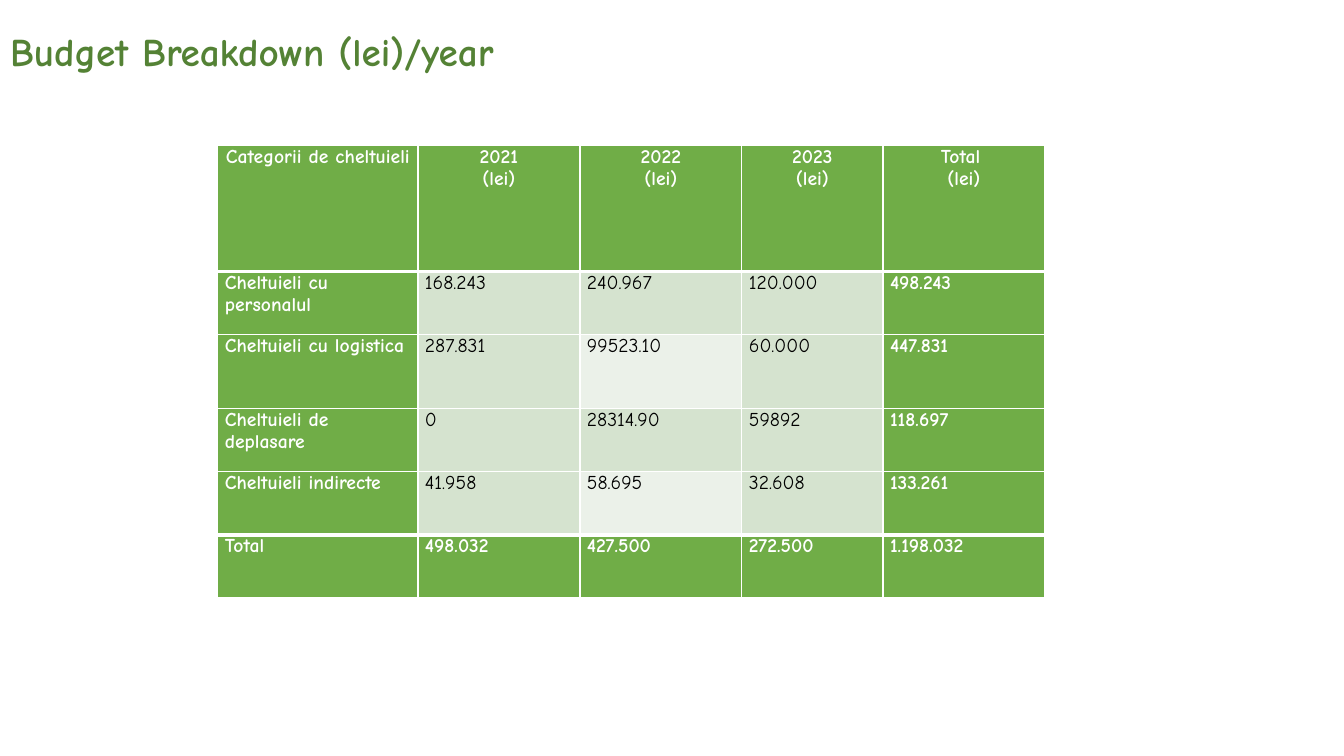
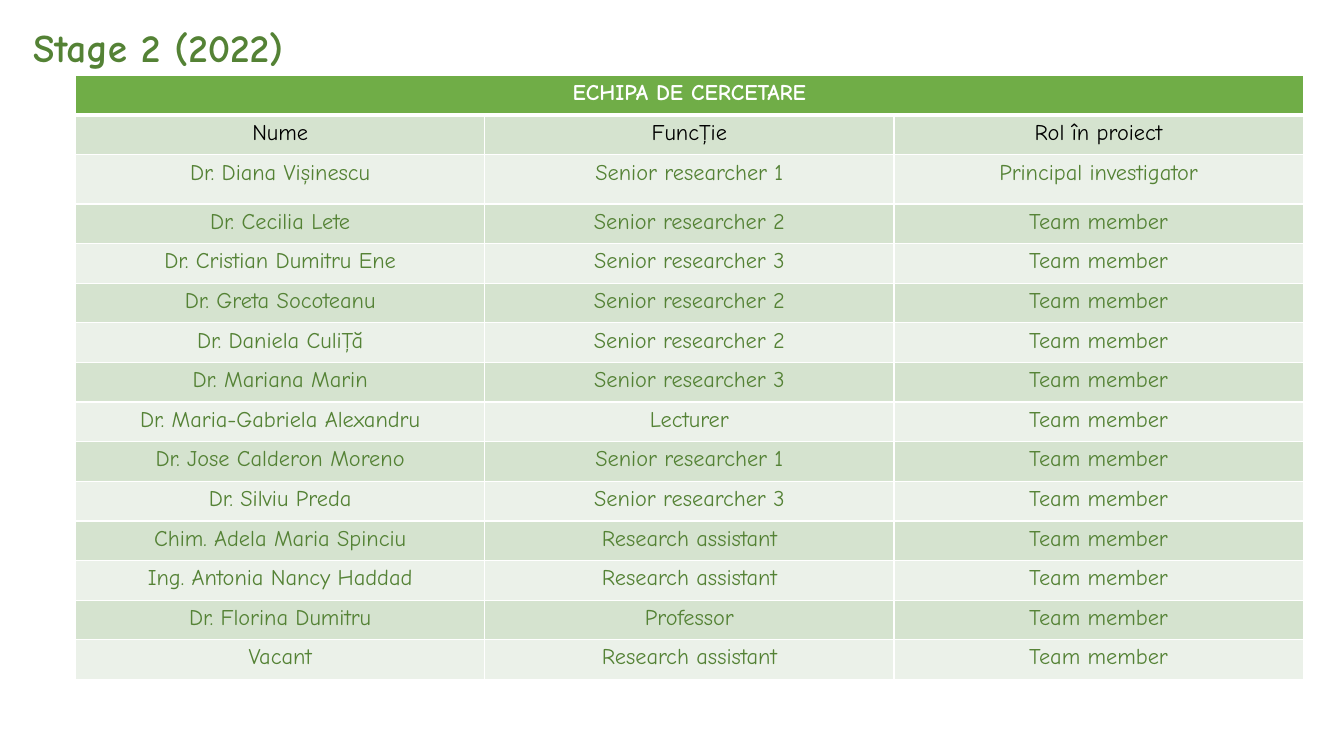
import pptx
import pptx.util
import pptx.dml.color
import pptx.enum.text
import pptx.oxml.ns
import lxml.etree

Pt = pptx.util.Pt
ALIGN = pptx.enum.text.PP_ALIGN
ANCHOR = pptx.enum.text.MSO_ANCHOR

FONT = "Comic Neue"
COLORS = {
    "heading": "548235",
    "accent": "70AD47",
    "band": "D5E3CF",
    "pale": "EBF1E9",
    "white": "FFFFFF",
    "black": "000000",
}
THIN, THICK = 1, 3
TITLE_SIZE = (403, 41)

BUDGET = [
    ["Categorii de cheltuieli", "2021\n(lei)", "2022\n(lei)", "2023\n(lei)", "Total \n(lei)"],
    ["Cheltuieli cu personalul", "168.243", "240.967", "120.000", "498.243"],
    ["Cheltuieli cu logistica", "287.831", "99523.10", "60.000", "447.831"],
    ["Cheltuieli de deplasare", "0", "28314.90", "59892", "118.697"],
    ["Cheltuieli indirecte", "41.958", "58.695", "32.608", "133.261"],
    ["Total", "498.032", "427.500", "272.500", "1.198.032"],
]

TEAM_HEADING = "ECHIPA DE CERCETARE"
TEAM_COLUMNS = ["Nume", "Funcţie", "Rol în proiect"]
TEAM = [
    ("Dr. Diana Vișinescu", "Senior researcher 1"),
    ("Dr. Cecilia Lete", "Senior researcher 2"),
    ("Dr. Cristian Dumitru Ene", "Senior researcher 3"),
    ("Dr. Greta Socoteanu", "Senior researcher 2"),
    ("Dr. Daniela Culiţă", "Senior researcher 2"),
    ("Dr. Mariana Marin", "Senior researcher 3"),
    ("Dr. Maria-Gabriela Alexandru", "Lecturer"),
    ("Dr. Jose Calderon Moreno", "Senior researcher 1"),
    ("Dr. Silviu Preda", "Senior researcher 3"),
    ("Chim. Adela Maria Spinciu", "Research assistant"),
    ("Ing. Antonia Nancy Haddad", "Research assistant"),
    ("Dr. Florina Dumitru", "Professor"),
    ("Vacant", "Research assistant"),
]


def rgb(name):
    return pptx.dml.color.RGBColor.from_string(COLORS[name])


def add_run(paragraph, text, size, color, bold):
    run = paragraph.add_run()
    run.text = text
    run.font.name = FONT
    run.font.size = Pt(size)
    run.font.bold = bold
    run.font.color.rgb = rgb(color)


def add_titled_slide(deck, heading, left, top):
    slide = deck.slides.add_slide(deck.slide_layouts[5])
    title = slide.shapes.title
    title.left, title.top = Pt(left), Pt(top)
    title.width, title.height = map(Pt, TITLE_SIZE)
    frame = title.text_frame
    frame.auto_size = pptx.enum.text.MSO_AUTO_SIZE.NONE
    frame.word_wrap = True
    frame.vertical_anchor = ANCHOR.TOP
    frame.paragraphs[0].alignment = ALIGN.LEFT
    add_run(frame.paragraphs[0], heading, TITLE_SIZE_PT, "heading", True)
    return slide


TITLE_SIZE_PT = 28


def add_grid(slide, left, top, widths, heights):
    table = slide.shapes.add_table(
        len(heights), len(widths), Pt(left), Pt(top), Pt(sum(widths)), Pt(sum(heights))
    ).table
    for column, width in zip(table.columns, widths):
        column.width = Pt(width)
    for row, height in zip(table.rows, heights):
        row.height = Pt(height)
    return table


def set_borders(cell, top, bottom):
    properties = cell._tc.get_or_add_tcPr()
    qn = pptx.oxml.ns.qn
    for tag, width in (("a:lnL", THIN), ("a:lnR", THIN), ("a:lnT", top), ("a:lnB", bottom)):
        line = lxml.etree.SubElement(properties, qn(tag), w=str(Pt(width)))
        fill = lxml.etree.SubElement(line, qn("a:solidFill"))
        lxml.etree.SubElement(fill, qn("a:srgbClr"), val=COLORS["white"])


def style_cell(cell, fill, top=THIN, bottom=THIN):
    set_borders(cell, top, bottom)
    cell.fill.solid()
    cell.fill.fore_color.rgb = rgb(fill)


def write_cell(cell, text, size, color, bold, alignment):
    frame = cell.text_frame
    for index, line in enumerate(text.split("\n")):
        paragraph = frame.add_paragraph() if index else frame.paragraphs[0]
        paragraph.alignment = alignment
        add_run(paragraph, line, size, color, bold)


def add_budget_table(slide, left, top):
    widths = [143, 115.7, 115.7, 100.8, 115.7]
    heights = [90, 45, 53, 45, 45, 45]
    table = add_grid(slide, left, top, widths, heights)
    last_row, last_column = len(heights) - 1, len(widths) - 1
    for r, values in enumerate(BUDGET):
        for c, value in enumerate(values):
            cell = table.cell(r, c)
            cell.margin_left = cell.margin_right = Pt(5)
            cell.margin_top = cell.margin_bottom = Pt(0)
            edge = r in (0, last_row) or c in (0, last_column)
            # Only the middle year has alternating bands
            inner = "pale" if c == 2 and r % 2 == 0 else "band"
            style_cell(
                cell,
                "accent" if edge else inner,
                top=THICK if r in (1, last_row) else THIN,
                bottom=THICK if r in (0, last_row - 1) else THIN,
            )
            alignment = ALIGN.CENTER if r == 0 else ALIGN.LEFT if c == 0 else ALIGN.JUSTIFY
            write_cell(cell, value, 14, "white" if edge else "black", edge, alignment)


def add_team_table(slide, left, top):
    members = [
        [name, position, "Team member" if i else "Principal investigator"]
        for i, (name, position) in enumerate(TEAM)
    ]
    rows = [[TEAM_HEADING], TEAM_COLUMNS] + members
    heights = [35.2 if r == 2 else 28.3 for r in range(len(rows))]
    table = add_grid(slide, left, top, [292.3] * len(TEAM_COLUMNS), heights)

    # Heading across all columns
    table.cell(0, 0).merge(table.cell(0, len(TEAM_COLUMNS) - 1))

    for r, values in enumerate(rows):
        fill = "accent" if r == 0 else "band" if r % 2 else "pale"
        color = ("white", "black")[r] if r < 2 else "heading"
        for c in range(len(TEAM_COLUMNS)):
            style_cell(
                table.cell(r, c), fill,
                top=THICK if r == 1 else THIN,
                bottom=THICK if r == 0 else THIN,
            )
        for c, value in enumerate(values):
            write_cell(table.cell(r, c), value, 16, color, r == 0, ALIGN.CENTER)


def main():
    deck = pptx.Presentation()
    deck.slide_width, deck.slide_height = Pt(960), Pt(540)

    # Budget by year
    budget_slide = add_titled_slide(deck, "Budget Breakdown (lei)/year", 0, 16)
    add_budget_table(budget_slide, 155.6, 104)

    # Research team
    team_slide = add_titled_slide(deck, "Stage 2 (2022)", 16.5, 13)
    add_team_table(team_slide, 54, 54)

    deck.save("out.pptx")


if __name__ == "__main__":
    main()
